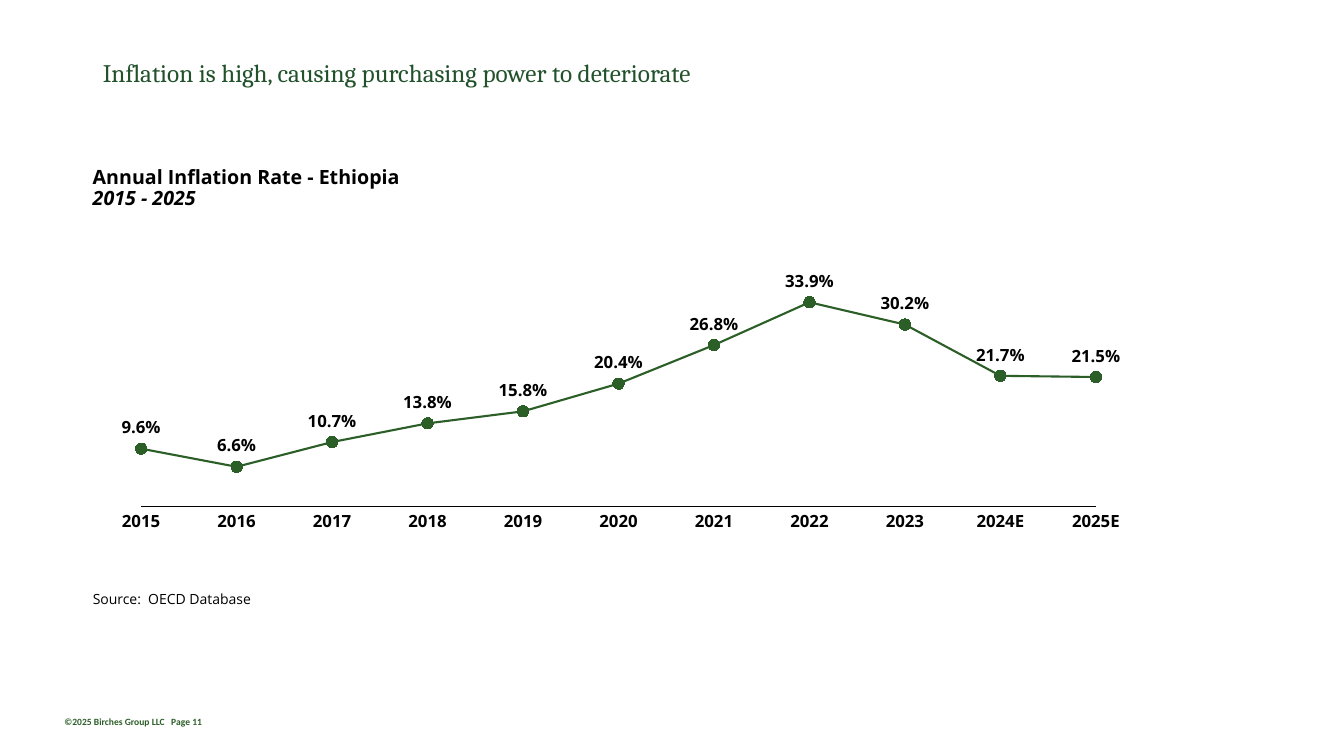
from dataclasses import dataclass

from lxml.etree import Element, SubElement
from pptx import Presentation
from pptx.chart.data import CategoryChartData
from pptx.dml.color import RGBColor
from pptx.enum.chart import XL_CHART_TYPE as ChartType
from pptx.enum.chart import XL_LABEL_POSITION as LabelPosition
from pptx.enum.chart import XL_MARKER_STYLE as MarkerStyle
from pptx.enum.chart import XL_TICK_LABEL_POSITION as TickLabels
from pptx.enum.chart import XL_TICK_MARK as TickMark
from pptx.enum.text import MSO_ANCHOR as Anchor
from pptx.enum.text import MSO_AUTO_SIZE as AutoSize
from pptx.enum.text import PP_ALIGN as Align
from pptx.oxml.ns import qn
from pptx.util import Inches, Pt


@dataclass(frozen=True)
class Theme:
    """Colours, fonts and type sizes of the deck."""

    ink: str = "000000"
    green: str = "2C5E28"
    title_green: str = "22522C"
    title_font: str = "Cambria"
    body_font: str = "Open Sans"
    footer_font: str = "Calibri"
    title_size: float = 18
    heading_size: float = 14
    label_size: float = 12
    source_size: float = 10
    footer_size: float = 6.8


THEME = Theme()
YEARS = [str(year) for year in range(2015, 2024)] + ["2024E", "2025E"]
RATES = [9.6, 6.6, 10.7, 13.8, 15.8, 20.4, 26.8, 33.9, 30.2, 21.7, 21.5]
PLOT = {"x": 0.024, "y": 0.177, "w": 0.947, "h": 0.719}


def format_font(font, size, name=THEME.body_font, color=THEME.ink, bold=False, italic=False):
    """Set every property of a font."""
    font.size, font.name, font.bold, font.italic = Pt(size), name, bold, italic
    font.color.rgb = RGBColor.from_string(color)


def write_text(para, text, align=Align.LEFT, spacing=0.9, **style):
    """Write one formatted run into a paragraph."""
    para.alignment, para.line_spacing = align, spacing
    span = para.add_run()
    span.text = text
    format_font(span.font, **style)


def add_frame(page, box, inset=0.0):
    """Add a text box with even side insets and return its text frame."""
    frame = page.shapes.add_textbox(*map(Inches, box)).text_frame
    frame.word_wrap = False
    frame.margin_left = frame.margin_right = Inches(inset)
    frame.margin_top = frame.margin_bottom = Inches(inset / 2)
    return frame


def add_title(page, box, text):
    """Place the slide title."""
    title = page.shapes.title
    title.left, title.top, title.width, title.height = map(Inches, box)
    frame = title.text_frame
    frame.auto_size, frame.vertical_anchor = AutoSize.NONE, Anchor.MIDDLE
    write_text(frame.paragraphs[0], text, size=THEME.title_size,
               name=THEME.title_font, color=THEME.title_green)


def add_heading(page, box, title, period):
    """Place the chart heading with its period in italics."""
    frame = add_frame(page, box)
    write_text(frame.paragraphs[0], title, size=THEME.heading_size, bold=True)
    write_text(frame.add_paragraph(), period, size=THEME.heading_size, bold=True, italic=True)


def set_plot_area(chart):
    """Fix the inner plot area and start the line on the value axis."""
    area = chart.element.find(".//" + qn("c:plotArea"))
    for layout in area.findall(qn("c:layout")):
        area.remove(layout)
    layout = Element(qn("c:layout"))
    area.insert(0, layout)
    manual = SubElement(layout, qn("c:manualLayout"))
    settings = [("layoutTarget", "inner"), ("xMode", "edge"), ("yMode", "edge"), *PLOT.items()]
    for tag, value in settings:
        SubElement(manual, qn("c:" + tag)).set("val", str(value))
    axis = area.find(qn("c:valAx"))
    for crossing in axis.findall(qn("c:crossBetween")):
        axis.remove(crossing)
    crossing = Element(qn("c:crossBetween"))
    crossing.set("val", "midCat")
    axis.find(qn("c:crosses")).addnext(crossing)


def style_series(series):
    """Style the rate line, its markers and its value labels."""
    green = RGBColor.from_string(THEME.green)
    series.smooth = False
    series.format.line.color.rgb = green
    series.format.line.width = Pt(1.5)
    series.marker.style, series.marker.size = MarkerStyle.CIRCLE, 8
    series.marker.format.fill.solid()
    series.marker.format.fill.fore_color.rgb = green
    series.marker.format.line.color.rgb = green
    labels = series.data_labels
    labels.show_value, labels.position = True, LabelPosition.ABOVE
    labels.number_format, labels.number_format_is_linked = '0.0"%"', False
    format_font(labels.font, THEME.label_size, bold=True)


def add_rate_chart(page, box):
    """Draw the inflation line with a year centred under each point."""
    data = CategoryChartData()
    data.categories = [str(number) for number in range(1, len(RATES) + 1)]
    data.add_series("Series 1", RATES)
    chart = page.shapes.add_chart(ChartType.LINE_MARKERS, *map(Inches, box), data).chart
    chart.has_legend = chart.has_title = False
    format_font(chart.font, THEME.source_size, THEME.footer_font)
    chart.plots[0].vary_by_categories = False
    style_series(chart.plots[0].series[0])

    values = chart.value_axis
    values.visible = values.has_major_gridlines = False
    values.minimum_scale, values.maximum_scale = 0, max(RATES)
    years = chart.category_axis
    years.tick_label_position = TickLabels.NONE
    years.major_tick_mark = years.minor_tick_mark = TickMark.NONE
    years.format.line.color.rgb = RGBColor.from_string(THEME.ink)
    years.format.line.width = Pt(0.75)
    set_plot_area(chart)

    left, top, width, height = box
    start = left + PLOT["x"] * width
    step = PLOT["w"] * width / (len(YEARS) - 1)
    label_top = top + (PLOT["y"] + PLOT["h"]) * height + 0.06
    for index, year in enumerate(YEARS):
        label_width = 0.1 * len(year)
        label_left = start + index * step - label_width / 2
        frame = add_frame(page, (label_left, label_top, label_width, 0.18))
        write_text(frame.paragraphs[0], year, align=Align.CENTER,
                   size=THEME.label_size, bold=True)


def add_source(page, box, text):
    """Place the source line."""
    write_text(add_frame(page, box).paragraphs[0], text, size=THEME.source_size)


def add_footer(page, box, owner, number):
    """Place the copyright line and page number, parted by a tab."""
    para = add_frame(page, box, inset=0.1).paragraphs[0]
    write_text(para, f"{owner}\t{number}", spacing=1.0, size=THEME.footer_size,
               name=THEME.footer_font, color=THEME.green, bold=True)
    stops = SubElement(para._p.get_or_add_pPr(), qn("a:tabLst"))
    stop = SubElement(stops, qn("a:tab"))
    stop.set("pos", str(Inches(1.06)))
    stop.set("algn", "l")


def build_inflation_page(deck):
    """Build the inflation slide."""
    page = deck.slides.add_slide(deck.slide_layouts[5])
    add_title(page, (0.92, 0.4, 11.5, 0.67),
              "Inflation is high, causing purchasing power to deteriorate")
    add_heading(page, (0.92, 1.66, 11.5, 0.42),
                "Annual Inflation Rate - Ethiopia", "2015 - 2025")
    add_rate_chart(page, (1.16, 2.5, 10, 2.82))
    add_source(page, (0.92, 5.88, 3.48, 0.42), "Source:  OECD Database")
    add_footer(page, (0.54, 7.05, 3.02, 0.21), "©2025 Birches Group LLC", "Page 11")


def main():
    """Create and save the deck."""
    deck = Presentation()
    deck.slide_width, deck.slide_height = Inches(13.33), Inches(7.5)
    build_inflation_page(deck)
    deck.save("out.pptx")


if __name__ == "__main__":
    main()
